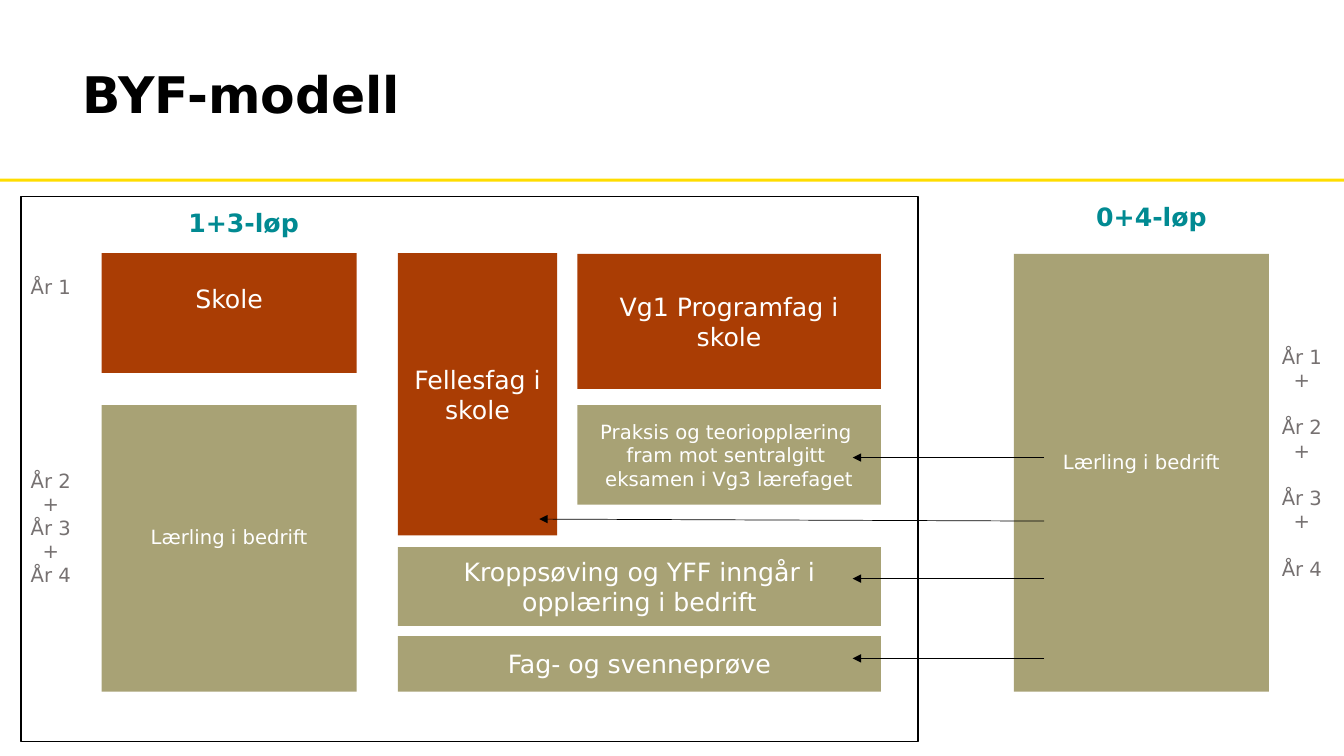
import pptx
import pptx.dml.color
import pptx.enum.shapes
import pptx.enum.text
import pptx.oxml
import pptx.oxml.ns
import pptx.util
from pptx.util import Cm

FONT = "DejaVu Sans"
SCHOOL, COMPANY = "AA3D04", "A8A275"
BLACK, WHITE, GREY, TEAL, YELLOW = "000000", "FFFFFF", "767171", "018A92", "FFDD00"
CENTER = pptx.enum.text.PP_ALIGN.CENTER
MIDDLE = pptx.enum.text.MSO_ANCHOR.MIDDLE


def rgb(value):
    return pptx.dml.color.RGBColor.from_string(value)


def add_run(p, text, size, color, bold=False):
    r = p.add_run()
    r.text = text
    r.font.name = FONT
    r.font.size = pptx.util.Pt(size)
    r.font.bold = bold
    r.font.color.rgb = rgb(color)


def add_title(s, text):
    sp = s.shapes.title
    sp.left, sp.top, sp.width, sp.height = Cm(2.08), Cm(0.91), Cm(26.67), Cm(3.07)
    tf = sp.text_frame
    tf.margin_left = tf.margin_right = tf.margin_top = tf.margin_bottom = 0
    tf.vertical_anchor = MIDDLE
    p = tf.paragraphs[0]
    p.alignment = pptx.enum.text.PP_ALIGN.LEFT
    p.line_spacing = 0.9
    add_run(p, text, 36, BLACK, True)


def add_rect(s, x, y, w, h, fill=None, line=None):
    sp = s.shapes.add_shape(pptx.enum.shapes.MSO_SHAPE.RECTANGLE,
                            Cm(x), Cm(y), Cm(w), Cm(h))
    sp.shadow.inherit = False
    if fill:
        sp.fill.solid()
        sp.fill.fore_color.rgb = rgb(fill)
    else:
        sp.fill.background()
    if line:
        sp.line.color.rgb = rgb(line)
        sp.line.width = pptx.util.Pt(1)
    else:
        sp.line.fill.background()
    return sp


def add_block(s, x, y, w, h, fill, lines, size, raise_by=0):
    """Filled box with centred text, lifted by half of raise_by."""
    tf = add_rect(s, x, y, w, h, fill).text_frame
    tf.word_wrap = True
    tf.vertical_anchor = MIDDLE
    tf.margin_bottom = Cm(0.13 + raise_by)
    p = tf.paragraphs[0]
    p.alignment = CENTER
    for i, line in enumerate(lines):
        if i:
            p.add_line_break()
        add_run(p, line, size, WHITE)


def add_label(s, center, y, w, h, lines, size, color, bold=False, group_gap=0):
    """Centred text lines; group_gap points stand after each plus sign."""
    tf = s.shapes.add_textbox(Cm(center - w / 2), Cm(y), Cm(w), Cm(h)).text_frame
    tf.word_wrap = True
    tf.margin_left = tf.margin_right = 0
    for i, line in enumerate(lines):
        p = tf.add_paragraph() if i else tf.paragraphs[0]
        p.alignment = CENTER
        if line == "+":
            p.space_after = pptx.util.Pt(group_gap)
        add_run(p, line, size, color, bold)


def add_arrow(s, x1, y1, x2, y2):
    c = s.shapes.add_connector(pptx.enum.shapes.MSO_CONNECTOR.STRAIGHT,
                               Cm(x1), Cm(y1), Cm(x2), Cm(y2))
    c.line.color.rgb = rgb(BLACK)
    c.line.width = pptx.util.Pt(0.5)
    ln = c.line._get_or_add_ln()
    ln.append(pptx.oxml.parse_xml(
        f'<a:tailEnd {pptx.oxml.ns.nsdecls("a")} type="triangle"/>'))
    c._element.spPr.append(pptx.oxml.parse_xml(
        f'<a:effectLst {pptx.oxml.ns.nsdecls("a")}/>'))


def main():
    prs = pptx.Presentation()
    prs.slide_width, prs.slide_height = Cm(33.87), Cm(19.05)
    s = prs.slides.add_slide(prs.slide_layouts[5])
    add_rect(s, 0, 4.5, 33.87, 0.08, YELLOW)
    add_title(s, "BYF-modell")

    for block in (
        (2.56, 6.38, 6.43, 3.02, SCHOOL, ["Skole"], 18, 0.74),
        (2.56, 10.21, 6.43, 7.22, COMPANY, ["Lærling i bedrift"], 14, 0.58),
        (10.03, 6.38, 4.01, 7.11, SCHOOL, ["Fellesfag i skole"], 18),
        (14.55, 6.4, 7.65, 3.4, SCHOOL, ["Vg1 Programfag i skole"], 18),
        (14.55, 10.21, 7.65, 2.51, COMPANY,
         ["Praksis og teoriopplæring ", "fram mot sentralgitt ",
          "eksamen i Vg3 lærefaget"], 14),
        (10.03, 13.79, 12.17, 1.98, COMPANY,
         ["Kroppsøving og YFF inngår i opplæring i bedrift"], 18),
        (10.03, 16.03, 12.17, 1.4, COMPANY, ["Fag- og svenneprøve"], 18),
        (25.55, 6.4, 6.43, 11.03, COMPANY, ["Lærling i bedrift"], 14, 0.58),
    ):
        add_block(s, *block)

    add_label(s, 6.14, 5.11, 3.4, 1, ["1+3-løp"], 18, TEAL, True)
    add_label(s, 29.02, 4.95, 3.4, 1, ["0+4-løp"], 18, TEAL, True)
    add_label(s, 1.28, 6.81, 1.5, 0.9, ["År 1"], 14, GREY)
    add_label(s, 1.28, 11.68, 1.5, 3.25, ["År 2", "+", "År 3", "+", "År 4"], 14, GREY)
    add_label(s, 32.81, 8.56, 1.5, 6.25,
              ["År 1", "+", "År 2", "+", "År 3", "+", "År 4"], 14, GREY,
              group_gap=16.8)

    for y in (11.53, 14.58, 16.59):
        add_arrow(s, 26.31, y, 21.49, y)
    add_arrow(s, 26.31, 13.13, 13.59, 13.08)
    add_rect(s, 0.53, 4.95, 22.61, 13.74, line=BLACK)
    prs.save("out.pptx")


if __name__ == "__main__":
    main()
